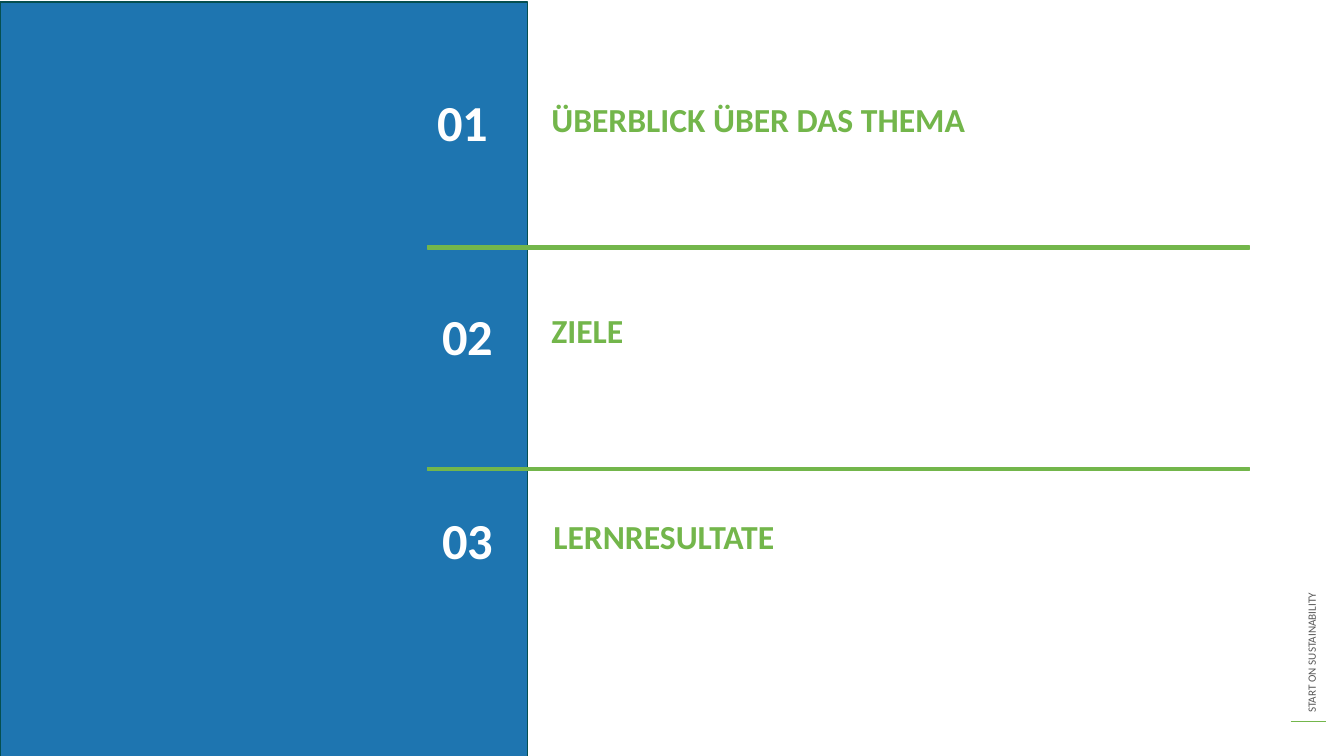
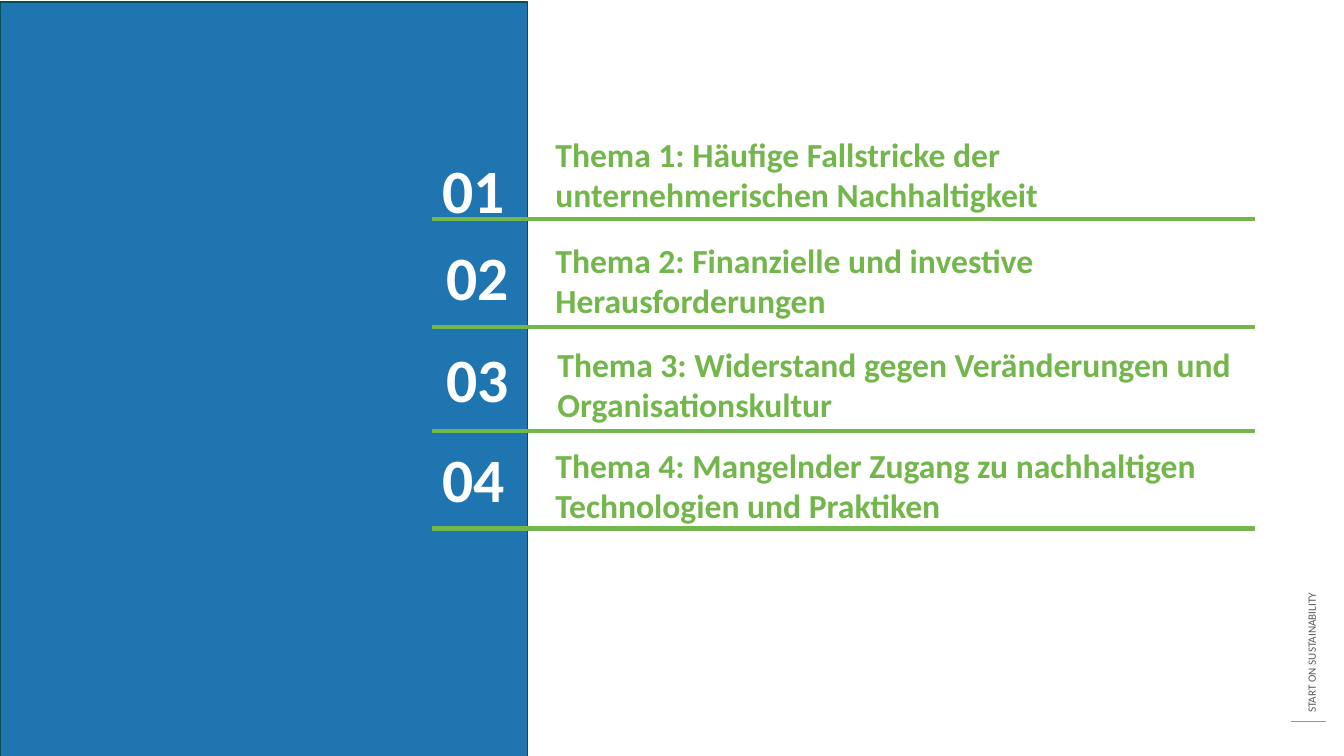
from lxml import etree
from pptx import Presentation
from pptx.dml.color import RGBColor
from pptx.enum.shapes import MSO_CONNECTOR, MSO_SHAPE
from pptx.enum.text import MSO_ANCHOR, PP_ALIGN
from pptx.oxml.ns import qn
from pptx.util import Emu, Pt

RECT = MSO_SHAPE.RECTANGLE
LINE = MSO_CONNECTOR.STRAIGHT
TOP = MSO_ANCHOR.TOP
LEFT = PP_ALIGN.LEFT

BLUE = RGBColor(0x1E, 0x75, 0xB0)
TEAL = RGBColor(0x05, 0x4F, 0x50)
GREEN = RGBColor(0x73, 0xB6, 0x4B)
GREY = RGBColor(0x59, 0x59, 0x59)
WHITE = RGBColor(0xFF, 0xFF, 0xFF)

FONT = "Calibri"
FOOTER = "START ON SUSTAINABILITY"
PX = 9144

AGENDAS = [
    {
        "size": 36,
        "left": 424,
        "rules": [244, 464],
        "items": [
            ("ÜBERBLICK ÜBER DAS THEMA", (537, 93, 718), (424, 67)),
            ("ZIELE", (537, 303, 718), (429, 280)),
            ("LERNRESULTATE", (539, 507, 718), (429, 482)),
        ],
    },
    {
        "size": 44,
        "left": 429,
        "rules": [216, 323, 426, 523],
        "items": [
            ("Thema 1: Häufige Fallstricke der unternehmerischen Nachhaltigkeit",
             (541, 128, 718), (429, 124)),
            ("Thema 2: Finanzielle und investive Herausforderungen",
             (541, 233, 718), (433, 210)),
            ("Thema 3: Widerstand gegen Veränderungen und Organisationskultur",
             (543, 336, 764), (433, 311)),
            ("Thema 4: Mangelnder Zugang zu nachhaltigen Technologien und Praktiken",
             (541, 436, 718), (429, 411)),
        ],
    },
]


def px(*values):
    return [Emu(v * PX) for v in values]


def add_text(slide, text, box, size, color, bold=True, spacing=1.0):
    shape = slide.shapes.add_textbox(*px(*box))
    frame = shape.text_frame
    frame.word_wrap = True
    frame.vertical_anchor = TOP
    frame.text = text
    para = frame.paragraphs[0]
    para.alignment = LEFT
    para.line_spacing = spacing
    font = para.runs[0].font
    font.name = FONT
    font.size = Pt(size)
    font.bold = bold
    font.color.rgb = color
    return shape


def add_bar(slide, box, fill, edge):
    bar = slide.shapes.add_shape(RECT, *px(*box))
    bar.shadow.inherit = False
    bar.fill.solid()
    bar.fill.fore_color.rgb = fill
    bar.line.color.rgb = edge
    bar.line.width = Pt(1)


def add_frame(slide):
    label = add_text(slide, FOOTER, (1078, 482, 446, 24), 8, GREY, bold=False)
    label.rotation = 270
    line = slide.shapes.add_connector(LINE, *px(1280, 716, 1315, 716))
    line.line.color.rgb = GREEN
    line.line.width = Pt(1)
    etree.SubElement(line._element.spPr, qn("a:effectLst"))
    add_bar(slide, (0, 2, 523, 750), BLUE, TEAL)


def add_agenda(slide, agenda):
    for num, (title, (x, y, width), spot) in enumerate(agenda["items"], 1):
        add_text(slide, title, (x, y, width, 37), 24, GREEN)
        add_text(slide, f"{num:02}", (*spot, 135, 105), agenda["size"],
                 WHITE, spacing=1.3)
    for y in agenda["rules"]:
        add_bar(slide, (agenda["left"], y, 815, 3), GREEN, GREEN)


def main():
    deck = Presentation()
    deck.slide_width, deck.slide_height = px(1333, 750)
    blank = deck.slide_layouts[6]
    for agenda in AGENDAS:
        slide = deck.slides.add_slide(blank)
        add_frame(slide)
        add_agenda(slide, agenda)
    deck.save("out.pptx")


if __name__ == "__main__":
    main()
